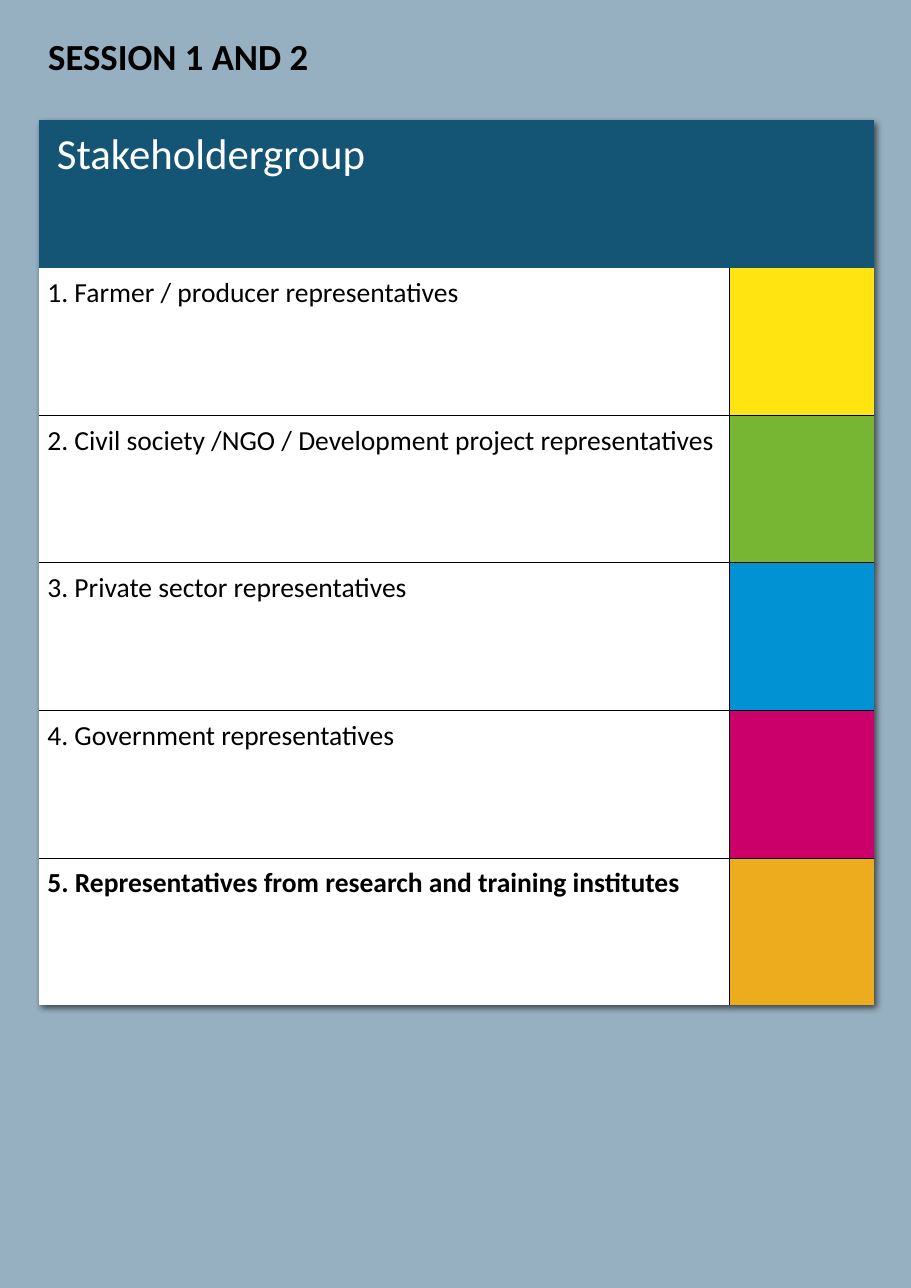
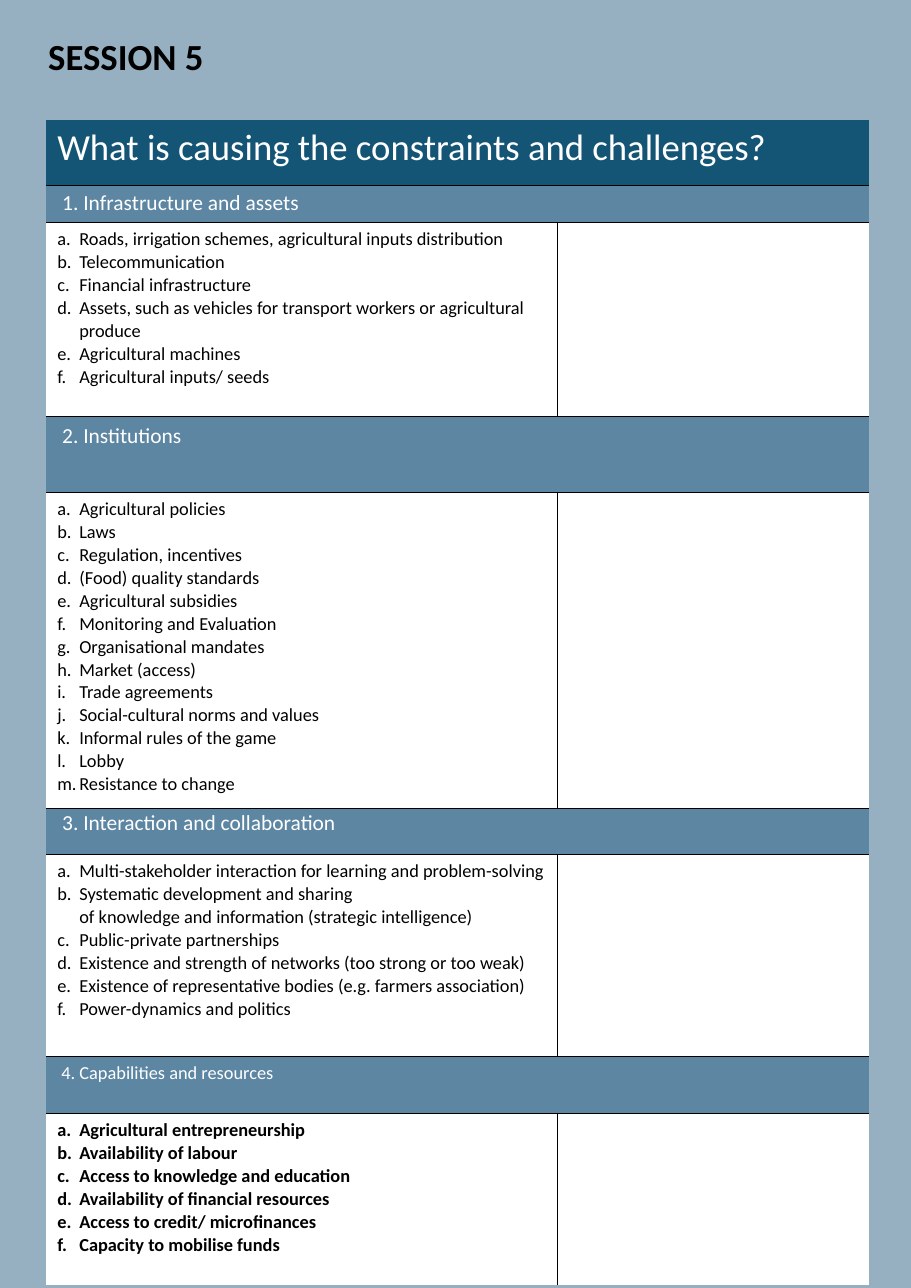
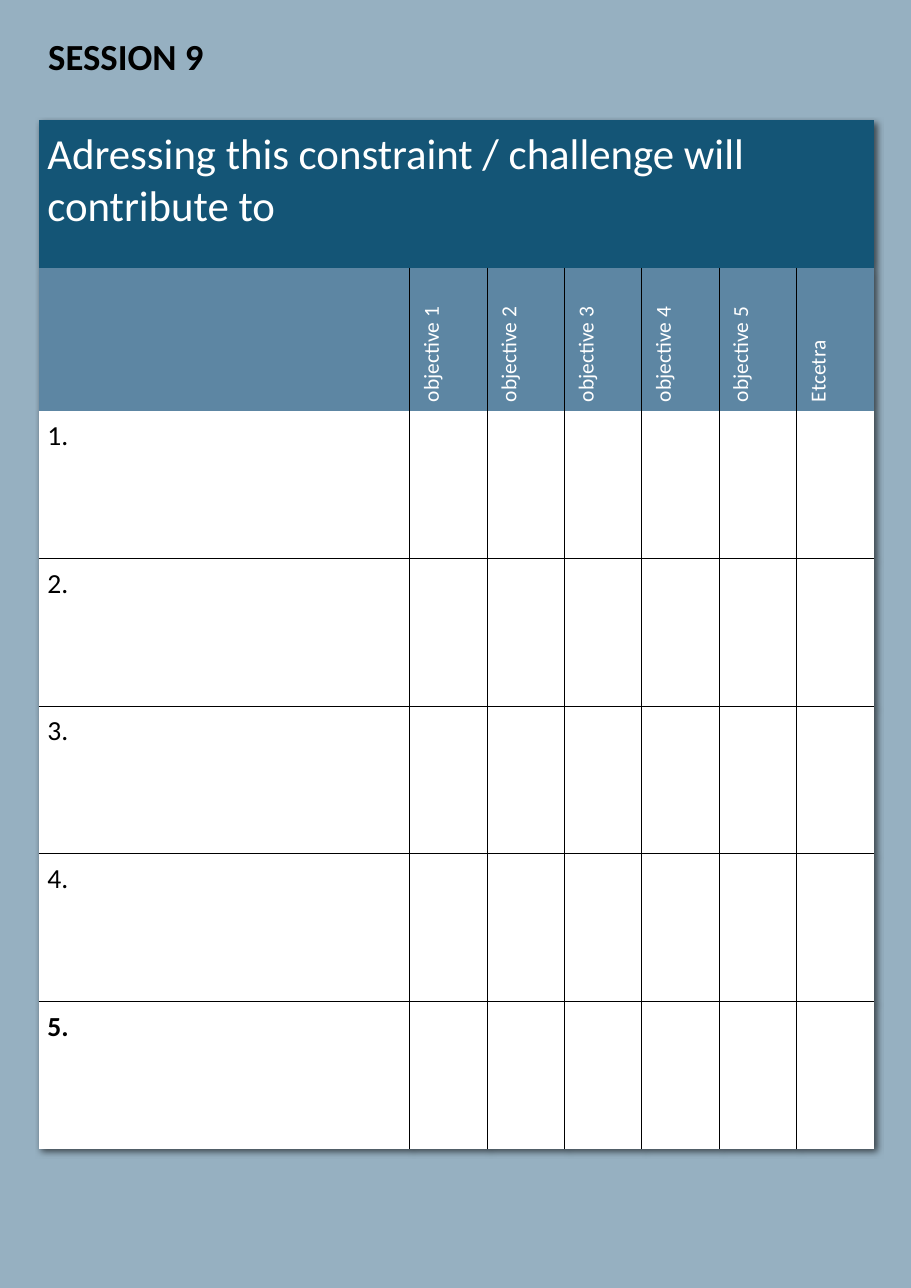
from dataclasses import dataclass

from lxml.etree import SubElement
from pptx import Presentation
from pptx.dml.color import RGBColor as Color
from pptx.enum.text import MSO_ANCHOR as Anchor
from pptx.oxml.ns import qn
from pptx.util import Inches, Pt


@dataclass(frozen=True)
class Theme:
    font: str = "Calibri"
    # Colours
    background: str = "96B0C1"
    header: str = "145576"
    band: str = "5D86A3"
    paper: str = "FFFFFF"
    ink: str = "000000"
    yellow: str = "FFE411"
    green: str = "76B632"
    blue: str = "0092D2"
    magenta: str = "CC006A"
    orange: str = "EDAC1E"
    # Type sizes and lines, in points
    heading: int = 28
    title: int = 24
    body: int = 18
    label: int = 14
    item: int = 12
    item_spacing: int = 15
    rule: float = 0.5
    # Lengths, in inches
    cell_inset: float = 0.08
    item_indent: float = 0.2


NO_STYLE = "{2D5ABB26-0587-4C30-8999-92F81FD0307C}"
TABLE_TOP = 9.32
TABLE_LEFT = 4.23
ROW = 11.46


class Worksheet:
    """Holds the style and the current slide; places are percent of the slide."""

    def __init__(self, theme):
        self.theme = theme
        self.presentation = Presentation()
        self.presentation.slide_width = Inches(8.27)
        self.presentation.slide_height = Inches(11.69)
        self.slide = None

    def x(self, percent):
        return round(self.presentation.slide_width * percent / 100)

    def y(self, percent):
        return round(self.presentation.slide_height * percent / 100)

    def new_slide(self, title):
        self.slide = self.presentation.slides.add_slide(
            self.presentation.slide_layouts[6])
        fill = self.slide.background.fill
        fill.solid()
        fill.fore_color.rgb = Color.from_string(self.theme.background)
        box = self.slide.shapes.add_textbox(
            self.x(4.11), self.y(2.22), self.x(91.66), self.y(4.28))
        box.text_frame.word_wrap = True
        self.set_text(box.text_frame.paragraphs[0], title, self.theme.title,
                      self.theme.ink, bold=True)

    def set_text(self, paragraph, text, size, color, bold=False, spacing=None):
        paragraph.text = text
        if spacing:
            paragraph.line_spacing = Pt(spacing)
        font = paragraph.font
        font.name, font.size, font.bold = self.theme.font, Pt(size), bold
        font.color.rgb = Color.from_string(color)

    def table(self, left, widths, heights, spanning, first_rule, shadow=True):
        """White table, ruled inside from the bottom of row first_rule on."""
        frame = self.slide.shapes.add_table(
            len(heights), len(widths), self.x(left), self.y(TABLE_TOP),
            self.x(sum(widths)), self.y(sum(heights)))
        table = frame.table
        table.first_row = table.horz_banding = False
        properties = table._tbl.tblPr
        properties.find(qn("a:tableStyleId")).text = NO_STYLE
        if shadow:
            self.shadow(properties)
        for column, width in zip(table.columns, widths):
            column.width = self.x(width)
        for row, height in zip(table.rows, heights):
            row.height = self.y(height)
        for row in spanning:
            table.cell(row, 0).merge(table.cell(row, len(widths) - 1))

        for r in range(len(heights)):
            for c in range(len(widths)):
                ruled = {
                    "L": c > 0 and r not in spanning,
                    "R": c < len(widths) - 1 and r not in spanning,
                    "T": r > first_rule,
                    "B": first_rule <= r < len(heights) - 1,
                }
                self.borders(table.cell(r, c), ruled)
                self.paint(table.cell(r, c), self.theme.paper)
        return table

    def shadow(self, properties):
        effects = SubElement(properties, qn("a:effectLst"))
        properties.insert(0, effects)
        outer = SubElement(effects, qn("a:outerShdw"), blurRad="50800",
                           dist="38100", dir="2700000", algn="tl")
        color = SubElement(outer, qn("a:srgbClr"), val=self.theme.ink)
        SubElement(color, qn("a:alpha"), val="60000")

    def borders(self, cell, ruled):
        properties = cell._tc.get_or_add_tcPr()
        for side, visible in ruled.items():
            line = SubElement(properties, qn(f"a:ln{side}"),
                              w=str(Pt(self.theme.rule)))
            if visible:
                fill = SubElement(line, qn("a:solidFill"))
                SubElement(fill, qn("a:srgbClr"), val=self.theme.ink)
            else:
                SubElement(line, qn("a:noFill"))

    def paint(self, cell, color):
        cell.fill.solid()
        cell.fill.fore_color.rgb = Color.from_string(color)

    def inset(self, cell):
        cell.margin_left = cell.margin_right = Inches(self.theme.cell_inset)
        cell.margin_top = cell.margin_bottom = Inches(self.theme.cell_inset)

    def band(self, cell, text, size, fill, spacing=None):
        self.paint(cell, fill)
        self.set_text(cell.text_frame.paragraphs[0], text, size,
                      self.theme.paper, spacing=spacing)

    def heading(self, cell, text):
        self.inset(cell)
        self.band(cell, text, self.theme.heading, self.theme.header)

    def entry(self, cell, text, bold=False):
        self.inset(cell)
        self.set_text(cell.text_frame.paragraphs[0], text, self.theme.body,
                      self.theme.ink, bold)

    def upright_label(self, cell, text):
        self.inset(cell)
        cell.vertical_anchor = Anchor.MIDDLE
        cell._tc.tcPr.set("vert", "vert270")
        self.band(cell, text, self.theme.label, self.theme.band)

    def lettered_list(self, cell, items, bold=False):
        frame = cell.text_frame
        indent = Inches(self.theme.item_indent)
        for number, item in enumerate(items):
            paragraph = frame.add_paragraph() if number else frame.paragraphs[0]
            properties = paragraph._p.get_or_add_pPr()
            properties.set("marL", str(indent))
            properties.set("indent", str(-indent))
            SubElement(properties, qn("a:buFont"), typeface="+mj-lt")
            SubElement(properties, qn("a:buAutoNum"), type="alphaLcPeriod")
            self.set_text(paragraph, item, self.theme.item, self.theme.ink,
                          bold, self.theme.item_spacing)


def stakeholder_slide(sheet):
    theme = sheet.theme
    groups = [
        ("1. Farmer / producer representatives", theme.yellow),
        ("2. Civil society /NGO / Development project representatives",
         theme.green),
        ("3. Private sector representatives", theme.blue),
        ("4. Government representatives", theme.magenta),
        ("5. Representatives from research and training institutes",
         theme.orange),
    ]
    sheet.new_slide("SESSION 1 AND 2")
    table = sheet.table(TABLE_LEFT, [75.82, 15.84], [ROW] * 6,
                        spanning=[0], first_rule=1)
    sheet.heading(table.cell(0, 0), " Stakeholdergroup")
    for row, (group, color) in enumerate(groups, start=1):
        sheet.entry(table.cell(row, 0), group, bold=row == len(groups))
        sheet.paint(table.cell(row, 1), color)


def causes_slide(sheet):
    theme = sheet.theme
    # Band text, type size, line spacing, listed causes
    sections = [
        (" 1. Infrastructure and assets", theme.label, None, [
            "Roads, irrigation schemes, agricultural inputs distribution",
            "Telecommunication",
            "Financial infrastructure",
            "Assets, such as vehicles for transport workers or agricultural "
            "produce",
            "Agricultural machines",
            "Agricultural inputs/ seeds",
        ]),
        (" 2. Institutions", theme.label, 18, [
            "Agricultural policies",
            "Laws",
            "Regulation, incentives",
            "(Food) quality standards",
            "Agricultural subsidies",
            "Monitoring and Evaluation",
            "Organisational mandates",
            "Market (access)",
            "Trade agreements",
            "Social-cultural norms and values",
            "Informal rules of the game",
            "Lobby",
            "Resistance to change",
        ]),
        (" 3. Interaction and collaboration", theme.label, theme.item_spacing, [
            "Multi-stakeholder interaction for learning and problem-solving",
            "Systematic development and sharing \v"
            "of knowledge and information (strategic intelligence)",
            "Public-private partnerships",
            "Existence and strength of networks (too strong or too weak)",
            "Existence of representative bodies (e.g. farmers association)",
            "Power-dynamics and politics",
        ]),
        (" 4. Capabilities and resources", theme.item, theme.item_spacing, [
            "Agricultural entrepreneurship",
            "Availability of labour",
            "Access to knowledge and education",
            "Availability of financial resources",
            "Access to credit/ microfinances",
            "Capacity to mobilise funds",
        ]),
    ]
    heights = [5.05, 2.87, 15.06, 5.9, 24.55, 3.58, 15.69, 4.42, 13.36]
    sheet.new_slide("SESSION 5")
    table = sheet.table(5.08, [56.11, 34.22], heights,
                        spanning=[0, 1, 3, 5, 7], first_rule=0, shadow=False)
    sheet.band(table.cell(0, 0),
               "What is causing the constraints and challenges?",
               theme.title, theme.header, spacing=29.6)
    for number, (name, size, spacing, causes) in enumerate(sections):
        row = 1 + 2 * number
        sheet.band(table.cell(row, 0), name, size, theme.band, spacing)
        sheet.lettered_list(table.cell(row + 1, 0), causes,
                            bold=number == len(sections) - 1)


def objectives_slide(sheet):
    objectives = [f"objective {number}" for number in range(1, 6)] + ["Etcetra"]
    sheet.new_slide("SESSION 9")
    table = sheet.table(TABLE_LEFT, [40.75] + [8.49] * len(objectives),
                        [ROW, 11.12] + [ROW] * 5, spanning=[0], first_rule=2)
    sheet.heading(table.cell(0, 0),
                  "Adressing this constraint / challenge will contribute to")
    sheet.paint(table.cell(1, 0), sheet.theme.band)
    for column, objective in enumerate(objectives, start=1):
        sheet.upright_label(table.cell(1, column), objective)
    for number in range(1, 6):
        sheet.entry(table.cell(number + 1, 0), f"{number}.", bold=number == 5)


def main():
    sheet = Worksheet(Theme())
    stakeholder_slide(sheet)
    causes_slide(sheet)
    objectives_slide(sheet)
    sheet.presentation.save("out.pptx")


if __name__ == "__main__":
    main()
